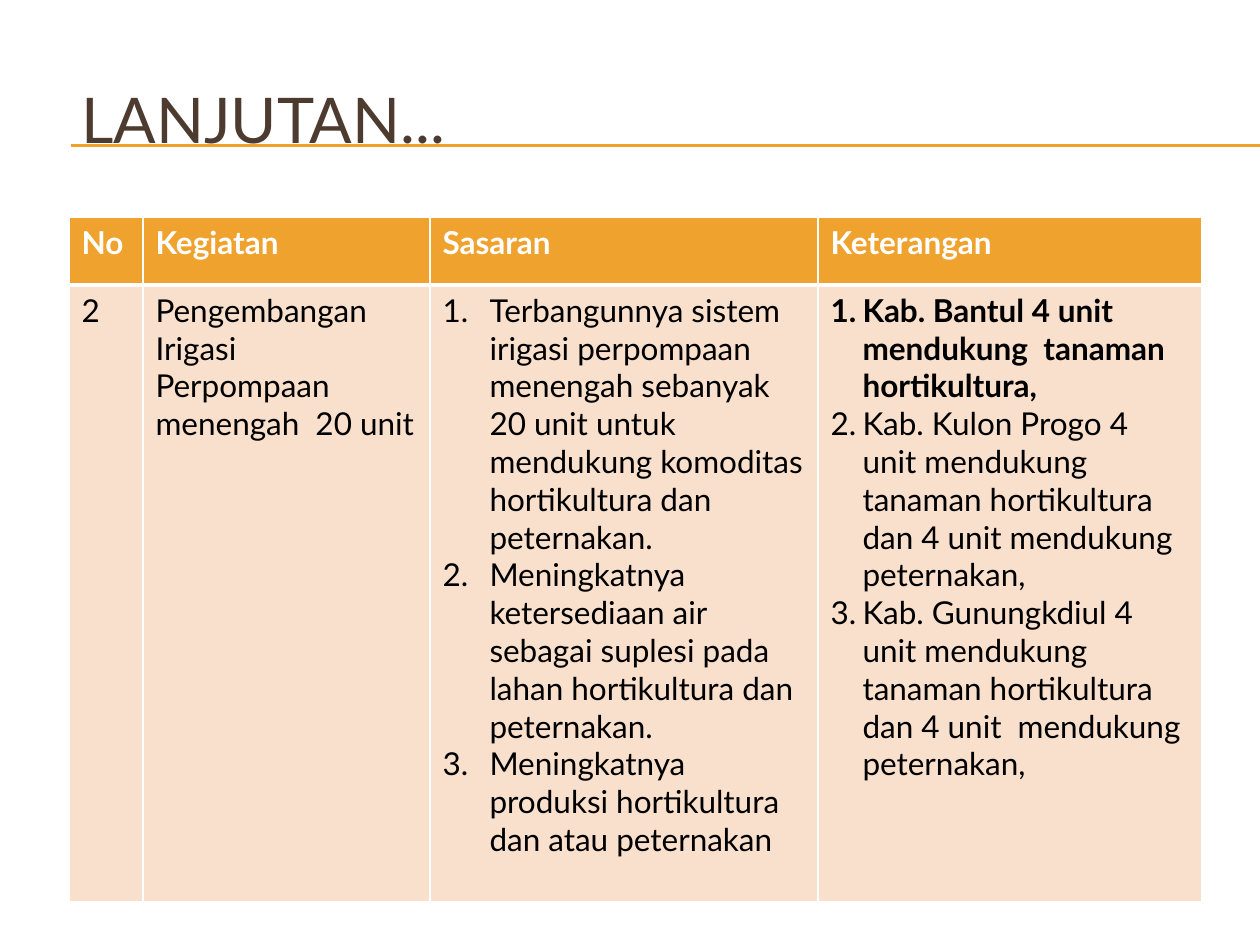
from lxml.etree import SubElement
from pptx import Presentation
from pptx.dml.color import RGBColor
from pptx.enum.shapes import MSO_CONNECTOR
from pptx.enum.text import MSO_ANCHOR
from pptx.oxml import parse_xml
from pptx.oxml.ns import nsdecls, qn
from pptx.util import Pt

PX = 914400 // 126  # EMU in one px
FONT = "Lato"
ORANGE, PEACH, BROWN = "F0A22E", "F9E0CD", "4E3B30"
WHITE, BLACK = "FFFFFF", "000000"

COLUMNS = [74, 287, 388, 384]
HEADINGS = ["No", "Kegiatan", "Sasaran", "Keterangan"]
TARGETS = [
    "Terbangunnya sistem  irigasi perpompaan menengah sebanyak 20 unit "
    "untuk mendukung komoditas hortikultura dan peternakan.",
    "Meningkatnya ketersediaan air sebagai suplesi pada lahan hortikultura "
    "dan peternakan.",
    "Meningkatnya produksi hortikultura dan atau peternakan",
]
REMARKS = [
    "Kab. Bantul 4 unit mendukung  tanaman hortikultura,",
    "Kab. Kulon Progo 4 unit mendukung tanaman hortikultura dan 4 unit "
    "mendukung peternakan,",
    "Kab. Gunungkdiul 4 unit mendukung tanaman hortikultura dan 4 unit  "
    "mendukung peternakan,",
]


def px(*lengths):
    return [length * PX for length in lengths]


def color(hex_code):
    return RGBColor.from_string(hex_code)


def write(paragraph, text, size=18, ink=BLACK, bold=False, indent=0):
    """Write one paragraph; an indent makes it a numbered item."""
    run = paragraph.add_run()
    run.text = text
    font = run.font
    font.name, font.size, font.bold = FONT, Pt(size), bold
    font.color.rgb = color(ink)
    if indent:
        props = paragraph._p.get_or_add_pPr()
        props.set("marL", str(indent * PX))
        props.set("indent", str(-indent * PX))
        SubElement(props, qn("a:buFont"), typeface="+mj-lt")
        SubElement(props, qn("a:buAutoNum"), type="arabicPeriod")


def write_list(cell, items, indent, bold_items=()):
    frame = cell.text_frame
    for i, item in enumerate(items):
        paragraph = frame.add_paragraph() if i else frame.paragraphs[0]
        write(paragraph, item, indent=indent, bold=i in bold_items)


def style_cell(cell, fill, top, bottom):
    """Fill a cell and give it white borders, widths in points."""
    cell.fill.solid()
    cell.fill.fore_color.rgb = color(fill)
    props = cell._tc.get_or_add_tcPr()
    for i, (side, width) in enumerate(zip("LRTB", (1, 1, top, bottom))):
        props.insert(i, parse_xml(
            f'<a:ln{side} {nsdecls("a")} w="{Pt(width)}"><a:solidFill>'
            f'<a:srgbClr val="{WHITE}"/></a:solidFill></a:ln{side}>'))


def add_title(slide, left, top, width, height):
    # Double rule under the title, out to the slide edge
    for y in (top + 106, top + 107):
        rule = slide.shapes.add_connector(
            MSO_CONNECTOR.STRAIGHT, *px(left + 2, y, 1260, y))
        rule.line.color.rgb = color(ORANGE)
        rule.line.width = Pt(0.75)
        SubElement(rule._element.spPr, qn("a:effectLst"))
    # Title text
    title = slide.shapes.add_textbox(*px(left, top, width, height))
    frame = title.text_frame
    frame.word_wrap = True
    frame.vertical_anchor = MSO_ANCHOR.MIDDLE
    write(frame.paragraphs[0], "LANJUTAN...", size=36, ink=BROWN)


def add_activities(slide, left, top, header_height, body_height):
    frame = slide.shapes.add_table(
        2, len(COLUMNS),
        *px(left, top, sum(COLUMNS), header_height + body_height))
    table = frame.table
    for column, width in zip(table.columns, px(*COLUMNS)):
        column.width = width
    for row, height in zip(table.rows, px(header_height, body_height)):
        row.height = height

    # Header row and cell styles
    for i, heading in enumerate(HEADINGS):
        header = table.cell(0, i)
        write(header.text_frame.paragraphs[0], heading, ink=WHITE, bold=True)
        style_cell(header, ORANGE, top=1, bottom=3)
        style_cell(table.cell(1, i), PEACH, top=3, bottom=1)

    # Activity row
    number, activity, targets, remarks = table.rows[1].cells
    write_list(number, ["2"], indent=0)
    write_list(activity, ["Pengembangan Irigasi Perpompaan menengah  20 unit"],
               indent=0)
    write_list(targets, TARGETS, indent=47)
    write_list(remarks, REMARKS, indent=32, bold_items=(0,))


def main():
    deck = Presentation()
    deck.slide_width, deck.slide_height = px(1260, 945)
    slide = deck.slides.add_slide(deck.slide_layouts[6])
    add_title(slide, 69, 39, 1134, 158)
    add_activities(slide, 69, 217, 68, 617)
    deck.save("out.pptx")


if __name__ == "__main__":
    main()
